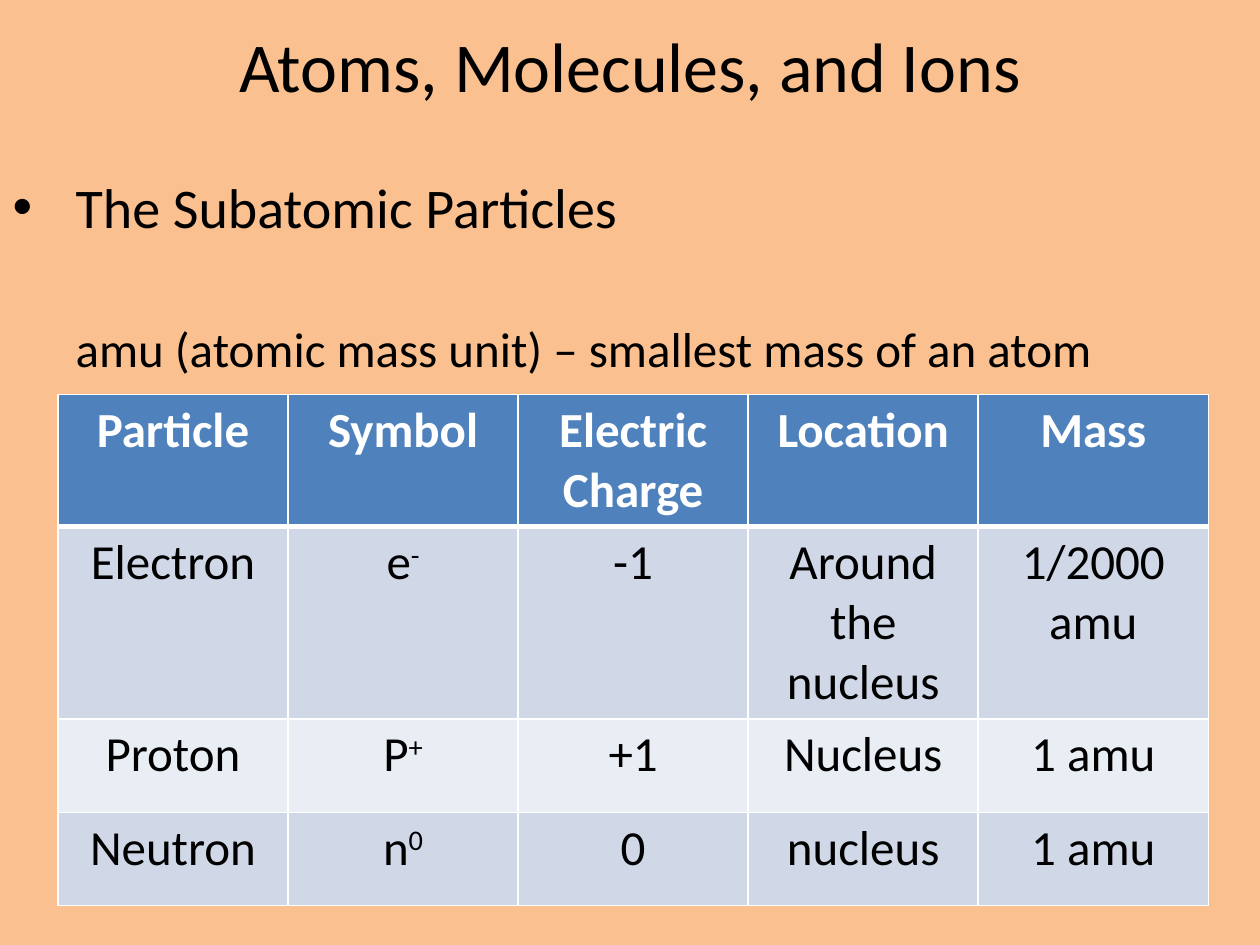
from lxml.etree import SubElement
from pptx import Presentation
from pptx.dml.color import RGBColor
from pptx.enum.text import MSO_ANCHOR, MSO_AUTO_SIZE, PP_ALIGN
from pptx.oxml.ns import qn
from pptx.util import Inches, Pt

PEACH = RGBColor(0xFA, 0xC0, 0x90)
BLACK = RGBColor(0, 0, 0)
WHITE = RGBColor(0xFF, 0xFF, 0xFF)
HEADER_BLUE = RGBColor(0x4F, 0x81, 0xBD)
BANDS = [RGBColor(0xE9, 0xED, 0xF4), RGBColor(0xD0, 0xD8, 0xE8)]
FONT = "Calibri"

# Each cell is its text, or a pair of base text and superscript
PARTICLES = [
    ["Particle", "Symbol", "Electric Charge", "Location", "Mass"],
    ["Electron", ("e", "-"), "-1", "Around the nucleus", "1/2000 amu"],
    ["Proton", ("P", "+"), "+1", "Nucleus", "1 amu"],
    ["Neutron", ("n", "0"), "0", "nucleus", "1 amu"],
]


def place(part, box):
    part.left, part.top, part.width, part.height = map(Inches, box)


def add_run(paragraph, text, size, color=BLACK, bold=False):
    run = paragraph.add_run()
    run.text = text
    run.font.name = FONT
    run.font.size = Pt(size)
    run.font.bold = bold
    run.font.color.rgb = color
    return run


def add_title(slide, box):
    title = slide.shapes.title
    place(title, box)
    frame = title.text_frame
    frame.auto_size = MSO_AUTO_SIZE.NONE
    frame.vertical_anchor = MSO_ANCHOR.MIDDLE
    heading = frame.paragraphs[0]
    heading.alignment = PP_ALIGN.CENTER
    add_run(heading, "Atoms, Molecules, and Ions", 40)


def set_indent(paragraph, margin, hanging):
    properties = paragraph._p.get_or_add_pPr()
    properties.set("marL", str(Inches(margin)))
    properties.set("indent", str(-Inches(hanging)))
    return properties


def add_body(slide, box):
    body = slide.placeholders[1]
    place(body, box)
    frame = body.text_frame
    frame.auto_size = MSO_AUTO_SIZE.NONE
    frame.vertical_anchor = MSO_ANCHOR.TOP

    # Bulleted topic
    topic = frame.paragraphs[0]
    topic.alignment = PP_ALIGN.LEFT
    properties = set_indent(topic, 0.5, 0.5)
    SubElement(properties, qn("a:buFont"), typeface="Arial")
    SubElement(properties, qn("a:buChar"), char="•")
    add_run(topic, "The Subatomic Particles", 32)

    # Definition, set one line apart from the topic
    definition = frame.add_paragraph()
    definition.level = 1
    definition.alignment = PP_ALIGN.LEFT
    definition.space_before = Pt(45)
    set_indent(definition, 0.5, 0)
    add_run(definition, "amu (atomic mass unit) – smallest mass of an atom", 28)


def set_borders(cell, top, bottom):
    properties = cell._tc.get_or_add_tcPr()
    widths = {"a:lnL": 1, "a:lnR": 1, "a:lnT": top, "a:lnB": bottom}
    for position, (side, width) in enumerate(widths.items()):
        line = SubElement(properties, qn(side), w=str(Pt(width)))
        fill = SubElement(line, qn("a:solidFill"))
        SubElement(fill, qn("a:srgbClr"), val=str(WHITE))
        properties.insert(position, line)


def fill_cell(cell, content, row):
    is_header = row == 0
    cell.fill.solid()
    cell.fill.fore_color.rgb = HEADER_BLUE if is_header else BANDS[row % 2]
    set_borders(cell, top=3 if row == 1 else 1, bottom=3 if is_header else 1)
    paragraph = cell.text_frame.paragraphs[0]
    paragraph.alignment = PP_ALIGN.CENTER
    base, *superscripts = [content] if isinstance(content, str) else content
    color = WHITE if is_header else BLACK
    add_run(paragraph, base, 28, color, is_header)
    for superscript in superscripts:
        run = add_run(paragraph, superscript, 28, color)
        run.font._element.set("baseline", "30000")


def add_particle_table(slide, box):
    frame = slide.shapes.add_table(
        len(PARTICLES), len(PARTICLES[0]), *map(Inches, box))
    for row, contents in enumerate(PARTICLES):
        for column, content in enumerate(contents):
            fill_cell(frame.table.cell(row, column), content, row)


def main():
    presentation = Presentation()
    presentation.slide_width = Inches(10)
    presentation.slide_height = Inches(7.5)
    slide = presentation.slides.add_slide(presentation.slide_layouts[0])
    slide.background.fill.solid()
    slide.background.fill.fore_color.rgb = PEACH

    add_title(slide, (0, -0.29, 10, 1.61))
    add_body(slide, (0, 1.32, 10, 6.38))
    # Rows grow with their text beyond this height
    add_particle_table(slide, (0.46, 3.13, 9.13, 2.96))
    presentation.save("out.pptx")


if __name__ == "__main__":
    main()
